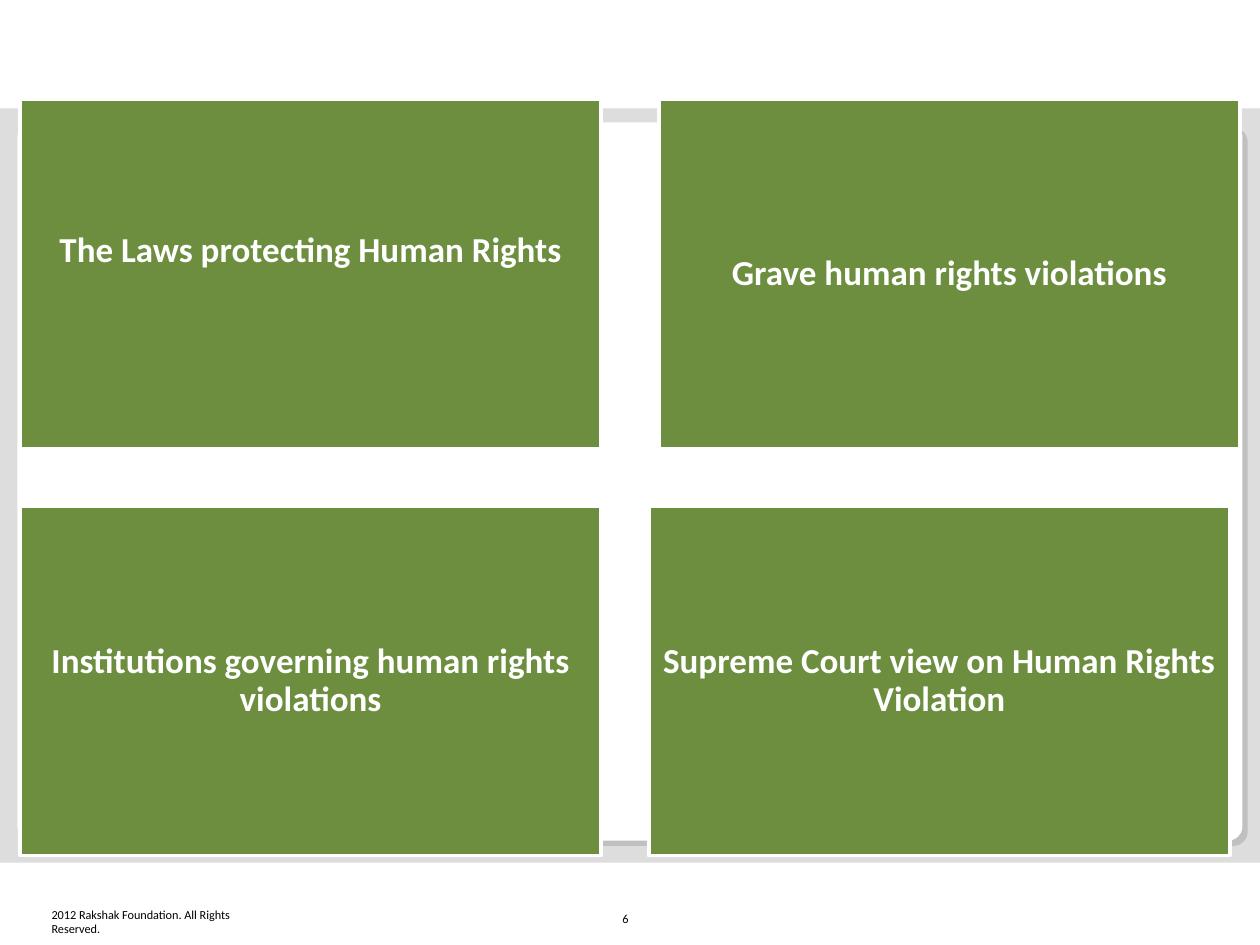
from pptx import Presentation
from pptx.dml.color import RGBColor
from pptx.enum.shapes import MSO_SHAPE
from pptx.enum.text import MSO_ANCHOR, PP_ALIGN
from pptx.util import Pt

COLORS = {"band": "DDDDDD", "shadow": "C0C0C0", "panel": "FFFFFF",
          "tile": "6C8E3E", "light": "FFFFFF", "dark": "000000"}
TILE_FONT = {"name": "Calibri", "size": Pt(20), "bold": True}
FOOTER_FONT = {"name": "Calibri", "size": Pt(7)}
TILE_WIDTH, TILE_HEIGHT, TILE_INSET = 332, 199.5, 6
TILES = [
    (0, 0, "The Laws protecting Human Rights", 26),
    (365, 0, "Grave human rights violations", 0),
    (0, 232.5, "Institutions governing human rights violations", 0),
    (359.3, 232.5, "Supreme Court view on Human Rights Violation", 0),
]


def color(name):
    return RGBColor.from_string(COLORS[name])


def set_attributes(target, values):
    for name, value in values.items():
        setattr(target, name, value)


def add_block(slide, kind, box, fill):
    shape = slide.shapes.add_shape(kind, *map(Pt, box))
    shape.shadow.inherit = False
    shape.fill.solid()
    shape.fill.fore_color.rgb = color(fill)
    shape.line.fill.background()
    return shape


def write(frame, text, font_values, font_color, frame_values):
    set_attributes(frame, frame_values)
    paragraph = frame.paragraphs[0]
    paragraph.text = text
    set_attributes(paragraph.font, font_values)
    paragraph.font.color.rgb = color(font_color)
    return paragraph


def add_background(slide, left, top, width, height):
    add_block(slide, MSO_SHAPE.RECTANGLE, (left, top, width, height), "band")
    for offset, fill in ((13, "shadow"), (10, "panel")):
        box = (left + offset, top + offset - 2, width - 20, height - 20.6)
        panel = add_block(slide, MSO_SHAPE.ROUNDED_RECTANGLE, box, fill)
        panel.adjustments[0] = 0.02


def add_tiles(slide, left, top):
    for x, y, text, lift in TILES:
        box = (left + x, top + y, TILE_WIDTH, TILE_HEIGHT)
        tile = add_block(slide, MSO_SHAPE.RECTANGLE, box, "tile")
        tile.line.color.rgb = color("light")
        tile.line.width = Pt(2)
        frame_values = {
            "word_wrap": True, "vertical_anchor": MSO_ANCHOR.MIDDLE,
            "margin_left": Pt(TILE_INSET), "margin_right": Pt(TILE_INSET),
            "margin_top": Pt(TILE_INSET), "margin_bottom": Pt(TILE_INSET + lift)}
        paragraph = write(tile.text_frame, text, TILE_FONT, "light", frame_values)
        set_attributes(paragraph, {"alignment": PP_ALIGN.CENTER, "line_spacing": 0.9})


def add_footer(slide, left, top):
    notice = slide.shapes.add_textbox(Pt(left), Pt(top), Pt(119), Pt(17))
    write(notice.text_frame, "2012 Rakshak Foundation. All Rights Reserved.",
          FOOTER_FONT, "dark",
          {"word_wrap": True, "vertical_anchor": MSO_ANCHOR.BOTTOM,
           "margin_left": 0, "margin_right": 0, "margin_top": 0, "margin_bottom": 0})
    number = slide.shapes.add_textbox(Pt(left + 319), Pt(top - 10), Pt(23), Pt(24.5))
    write(number.text_frame, "6", FOOTER_FONT, "dark",
          {"word_wrap": True, "vertical_anchor": MSO_ANCHOR.BOTTOM})


def main():
    presentation = Presentation()
    set_attributes(presentation, {"slide_width": Pt(720), "slide_height": Pt(540)})
    slide = presentation.slides.add_slide(presentation.slide_layouts[6])
    add_background(slide, 0, 62, 720, 431)
    add_tiles(slide, 11.5, 57)
    add_footer(slide, 29.5, 518)
    presentation.save("out.pptx")


if __name__ == "__main__":
    main()
